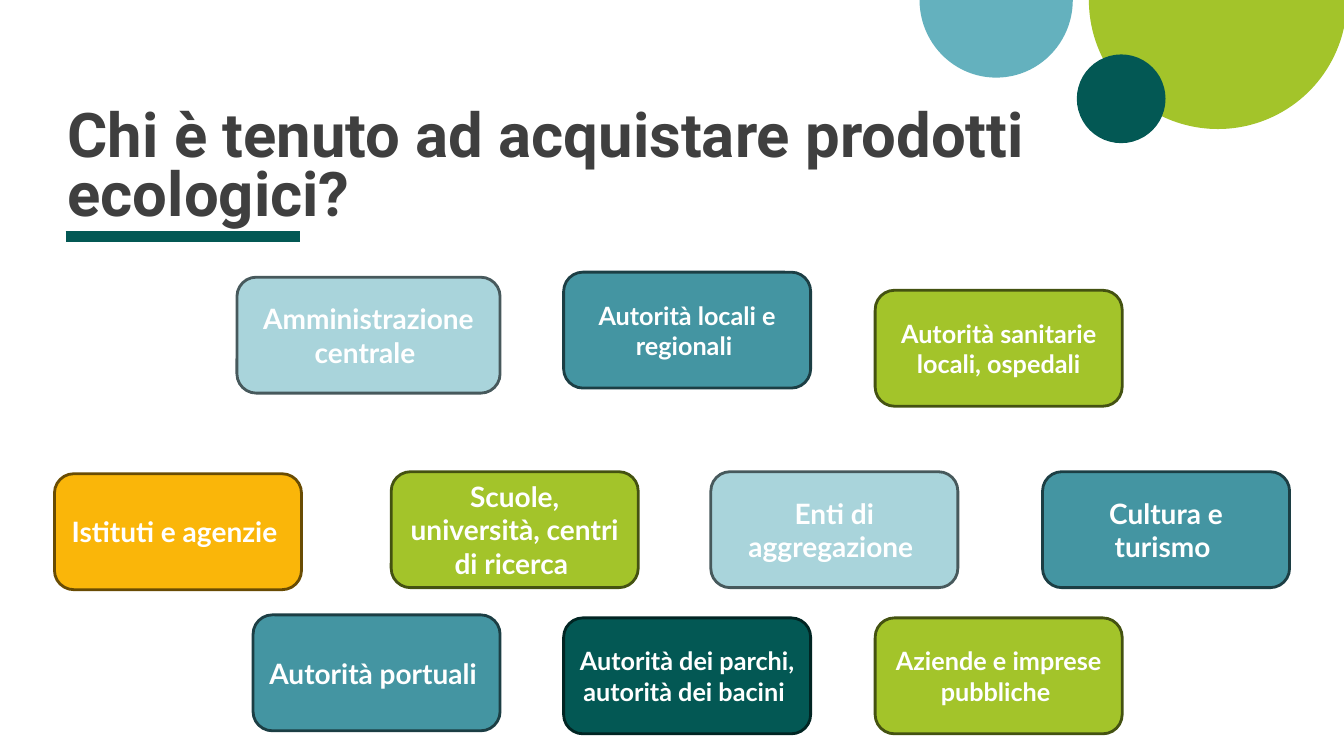
from lxml import etree
from pptx import Presentation
from pptx.dml.color import RGBColor
from pptx.enum.shapes import MSO_CONNECTOR, MSO_SHAPE
from pptx.enum.text import MSO_ANCHOR, MSO_AUTO_SIZE, PP_ALIGN
from pptx.oxml.ns import qn
from pptx.util import Inches, Pt

STRAIGHT = MSO_CONNECTOR.STRAIGHT
PIE, OVAL, ROUNDED = MSO_SHAPE.PIE, MSO_SHAPE.OVAL, MSO_SHAPE.ROUNDED_RECTANGLE
BOTTOM, MIDDLE = MSO_ANCHOR.BOTTOM, MSO_ANCHOR.MIDDLE
LEFT, CENTER = PP_ALIGN.LEFT, PP_ALIGN.CENTER
NO_FIT = MSO_AUTO_SIZE.NONE

WHITE, GREY = "FFFFFF", "3F3F3F"
PALE, TEAL, GREEN = "A9D4DB", "4495A2", "A3C42A"
AMBER, DARK, SKY = "FAB609", "035854", "64B1BE"
OUTLINES = {PALE: "47595C", TEAL: "1C3E44", GREEN: "445211",
            AMBER: "694C03", DARK: "012523"}
CARD_WIDTH, CARD_HEIGHT = 2.45, 1.15
HALF_TURN = 108

CARDS = [
    ("Amministrazione centrale ", 2.35, 2.75, 2.61, PALE, 20),
    ("Autorità locali e regionali ", 5.59, 2.7, CARD_WIDTH, TEAL, 18),
    ("Autorità sanitarie locali, ospedali", 8.68, 2.88, CARD_WIDTH, GREEN, 18),
    ("Istituti e agenzie ", 0.54, 4.7, CARD_WIDTH, AMBER, 20),
    ("Scuole, università, centri di ricerca ", 3.88, 4.68, CARD_WIDTH, GREEN, 20),
    ("Enti di aggregazione ", 7.05, 4.68, CARD_WIDTH, PALE, 20),
    ("Cultura e turismo ", 10.34, 4.68, CARD_WIDTH, TEAL, 20),
    ("Autorità portuali ", 2.51, 6.1, CARD_WIDTH, TEAL, 20),
    ("Autorità dei parchi, autorità dei bacini ", 5.59, 6.13, CARD_WIDTH, DARK, 18),
    ("Aziende e imprese pubbliche ", 8.68, 6.13, CARD_WIDTH, GREEN, 18),
]


def rgb(color):
    """Turn a hex string into a colour."""
    return RGBColor.from_string(color)


def write(tf, text, font, size, color, align):
    """Put one bold paragraph into a text frame."""
    tf.word_wrap = True
    tf.text = text
    p = tf.paragraphs[0]
    p.alignment = align
    r = p.runs[0]
    r.font.name, r.font.size, r.font.bold = font, Pt(size), True
    r.font.color.rgb = rgb(color)
    return p


def add_filled(s, kind, left, top, width, height, fill):
    """Add a filled shape without outline or shadow."""
    sp = s.shapes.add_shape(kind, Inches(left), Inches(top), Inches(width), Inches(height))
    sp.shadow.inherit = False
    sp.fill.solid()
    sp.fill.fore_color.rgb = rgb(fill)
    sp.line.fill.background()
    return sp


def add_half_disc(s, left, top, width, height, fill):
    """Add the lower half of a disc that hangs from the top edge."""
    sp = add_filled(s, PIE, left, top, width, height, fill)
    sp.adjustments[0], sp.adjustments[1] = 0, HALF_TURN


def add_underline(s):
    """Add the thick rule under the title."""
    line = s.shapes.add_connector(STRAIGHT, Inches(0.65), Inches(2.35), Inches(2.98), Inches(2.35))
    line.line.color.rgb = rgb(DARK)
    line.line.width = Pt(8)
    etree.SubElement(line._element.spPr, qn("a:effectLst"))


def set_title(s, text):
    """Place and format the title placeholder."""
    title = s.shapes.title
    title.left, title.top = Inches(0.67), Inches(0.55)
    title.width, title.height = Inches(12), Inches(1.72)
    tf = title.text_frame
    tf.margin_left = tf.margin_top = tf.margin_right = tf.margin_bottom = 0
    tf.vertical_anchor = BOTTOM
    tf.auto_size = NO_FIT
    write(tf, text, "Roboto", 44, GREY, LEFT).line_spacing = 0.8


def add_card(s, text, left, top, width, fill, size):
    """Add a rounded, outlined card with centred text."""
    sp = add_filled(s, ROUNDED, left, top, width, CARD_HEIGHT, fill)
    sp.line.color.rgb = rgb(OUTLINES[fill])
    sp.line.width = Pt(2)
    sp.text_frame.vertical_anchor = MIDDLE
    write(sp.text_frame, text, "Lato", size, WHITE, CENTER)


def main():
    """Build the slide and save it."""
    prs = Presentation()
    prs.slide_width, prs.slide_height = Inches(13.33), Inches(7.5)
    s = prs.slides.add_slide(prs.slide_layouts[5])
    add_underline(s)
    add_half_disc(s, 10.8, -1.28, 2.56, 2.56, GREEN)
    add_half_disc(s, 9.12, -0.77, 1.52, 1.54, SKY)
    add_filled(s, OVAL, 10.68, 0.54, 0.88, 0.88, DARK)
    set_title(s, "Chi è tenuto ad acquistare prodotti ecologici?")
    for card in CARDS:
        add_card(s, *card)
    prs.save("out.pptx")


if __name__ == "__main__":
    main()
